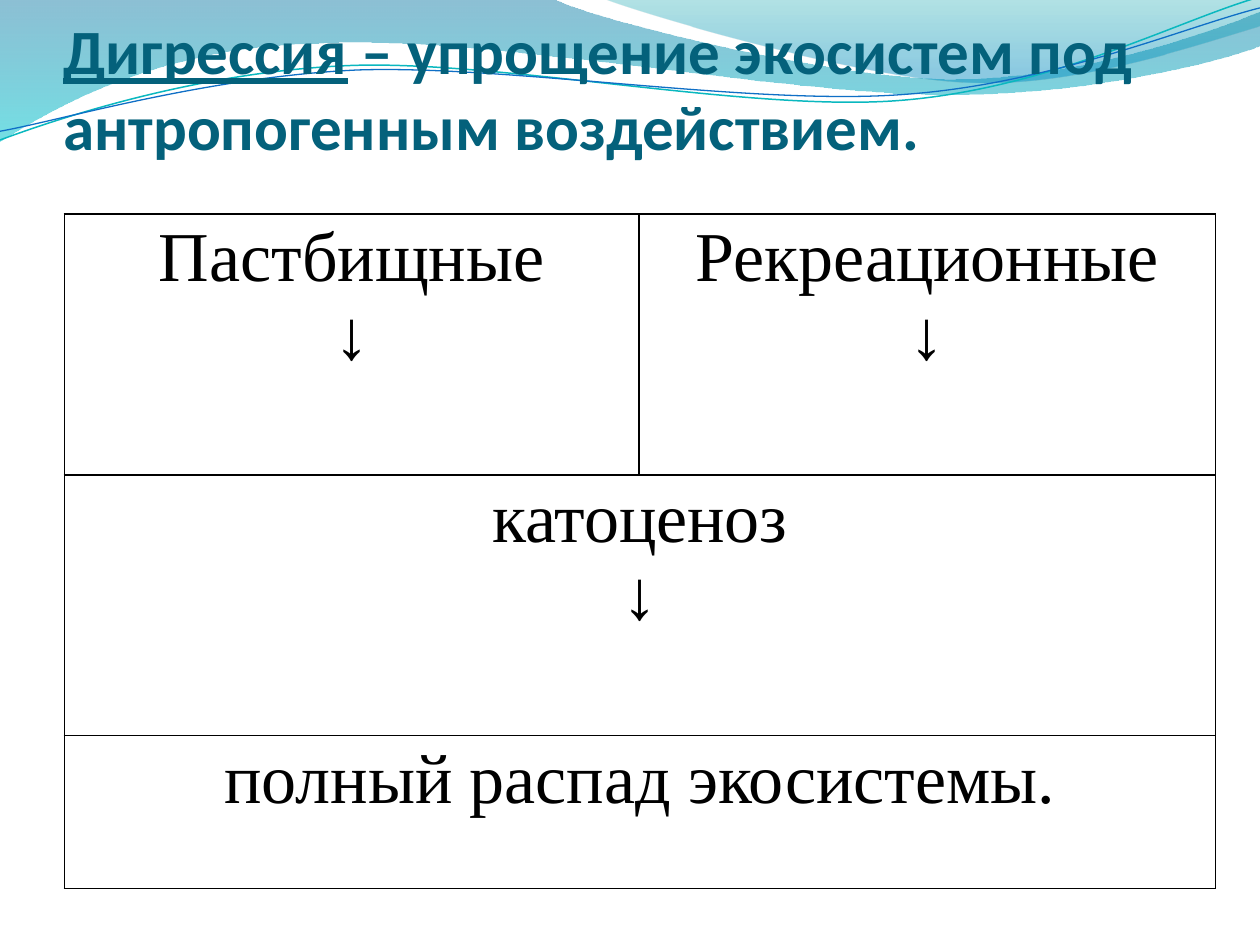
from dataclasses import dataclass

from lxml.etree import SubElement
from pptx import Presentation
from pptx.dml.color import RGBColor
from pptx.enum.text import MSO_ANCHOR, PP_ALIGN
from pptx.oxml.ns import qn
from pptx.util import Pt


@dataclass(frozen=True)
class Theme:
    heading: str = "04617B"
    body: str = "000000"
    border: str = "000000"
    teal_line: str = "0AB8BF"
    blue_line: str = "0F6FC6"
    # Gradient stops: position, colour, opacity in percent
    left_wave: tuple = ((0, "0074A1", 45), (1, "00C6CF", 55))
    right_wave: tuple = ((0, "00A1A9", 30), (0.8, "008BBF", 45))
    heading_font: str = "Calibri"
    body_font: str = "Times New Roman"
    heading_size: int = 36
    body_size: int = 40


def rgb(value):
    return RGBColor.from_string(value)


def bend(shape, steps):
    """Join the three line ends of each six-number step into one cubic curve."""
    ends = iter(list(shape.element.iter(qn("a:lnTo"))))
    for step in steps:
        first = next(ends)
        if len(step) == 2:
            continue
        first.tag = qn("a:cubicBezTo")
        for _ in range(2):
            control = next(ends)
            first.append(control[0])
            control.getparent().remove(control)


class SlideWriter:
    def __init__(self, slide, theme):
        self.slide = slide
        self.theme = theme

    def outline(self, start, steps, closed):
        """Draw line ends (2 numbers) and cubic curves (6 numbers)."""
        builder = self.slide.shapes.build_freeform(Pt(start[0]), Pt(start[1]))
        knots = [(Pt(x), Pt(y)) for step in steps for x, y in zip(step[::2], step[1::2])]
        builder.add_line_segments(knots, close=closed)
        shape = builder.convert_to_shape()
        bend(shape, steps)
        shape.shadow.inherit = False
        return shape

    def wave(self, start, steps, stops):
        """Draw a filled band with a translucent gradient running downwards."""
        shape = self.outline(start, steps, True)
        shape.line.fill.background()
        shape.fill.gradient()
        shape.fill.gradient_angle = 270
        for stop, (position, colour, _) in zip(shape.fill.gradient_stops, stops):
            stop.position = position
            stop.color.rgb = rgb(colour)
        for node, (_, _, opacity) in zip(shape.element.iter(qn("a:srgbClr")), stops):
            SubElement(node, qn("a:alpha"), val=str(opacity * 1000))

    def curve(self, start, steps, colour, width):
        shape = self.outline(start, steps, False)
        shape.fill.background()
        shape.line.color.rgb = rgb(colour)
        shape.line.width = Pt(width)

    def style(self, paragraph, font, size, colour):
        paragraph.font.name = font
        paragraph.font.size = Pt(size)
        paragraph.font.color.rgb = rgb(colour)

    def heading(self, term, definition, left, top, width, height, space_below):
        frame = self.slide.shapes.add_textbox(
            Pt(left), Pt(top), Pt(width), Pt(height)).text_frame
        frame.word_wrap = True
        frame.vertical_anchor = MSO_ANCHOR.BOTTOM
        frame.margin_left = frame.margin_right = frame.margin_top = 0
        frame.margin_bottom = Pt(space_below)
        paragraph = frame.paragraphs[0]
        self.style(paragraph, self.theme.heading_font,
                   self.theme.heading_size, self.theme.heading)
        paragraph.font.bold = True
        term_run = paragraph.add_run()
        term_run.text = term
        term_run.font.underline = True
        paragraph.add_run().text = definition

    def border(self, cell):
        properties = cell._tc.get_or_add_tcPr()
        for position, side in enumerate(("a:lnL", "a:lnR", "a:lnT", "a:lnB")):
            line = properties.makeelement(qn(side), w=str(Pt(1)))
            fill = SubElement(line, qn("a:solidFill"))
            SubElement(fill, qn("a:srgbClr"), val=self.theme.border)
            properties.insert(position, line)

    def stages(self, rows, left, top, widths, heights):
        """Draw the table; a row with a single entry spans all columns."""
        table = self.slide.shapes.add_table(
            len(heights), len(widths), Pt(left), Pt(top),
            Pt(sum(widths)), Pt(sum(heights))).table
        table.first_row = table.horz_banding = False
        for column, width in zip(table.columns, widths):
            column.width = Pt(width)
        for row, height in zip(table.rows, heights):
            row.height = Pt(height)
        for cell in table.iter_cells():
            cell.fill.background()
            self.border(cell)
        for r, entries in enumerate(rows):
            if len(entries) == 1:
                table.cell(r, 0).merge(table.cell(r, len(widths) - 1))
            for c, entry in enumerate(entries):
                self.stage(table.cell(r, c), entry)

    def stage(self, cell, entry):
        cell.margin_left = cell.margin_right = Pt(5)
        cell.margin_top = cell.margin_bottom = Pt(3)
        cell.text = entry
        for paragraph in cell.text_frame.paragraphs:
            paragraph.alignment = PP_ALIGN.CENTER
            self.style(paragraph, self.theme.body_font,
                       self.theme.body_size, self.theme.body)


def main():
    deck = Presentation()
    deck.slide_width, deck.slide_height = Pt(720), Pt(540)
    theme = Theme()
    writer = SlideWriter(deck.slides.add_slide(deck.slide_layouts[6]), theme)

    writer.wave((0, 0), [(317, -0.5),
                         (343, 12, 478, 45, 546, 45), (614, 45, 690, 19, 720, 6.5),
                         (720.5, 26), (708, 32, 626, 55, 537, 54),
                         (448, 54, 275, 20, 185, 24.5), (93, 26, 33, 60, -0.5, 81)],
                theme.left_wave)
    writer.wave((345, -0.5), [(366, 8, 491, 45, 554, 47),
                              (616, 50, 692, 23, 720, 15), (720, 0)],
                theme.right_wave)
    writer.curve((0, 80), [(35, 67, 114, 41, 199, 37.5),
                           (284, 34, 427, 64, 513, 57.5), (600, 51, 675, 11, 719, -1.5)],
                 theme.teal_line, 0.85)
    writer.curve((0, 75), [(34, 69, 118, 44, 204, 40),
                           (290, 37, 430, 60.5, 516, 54), (602, 48, 678, 15, 720, 4.5)],
                 theme.blue_line, 0.75)

    writer.heading("Дигрессия", " – упрощение экосистем под антропогенным воздействием.",
                   left=36.3, top=55.5, width=648, height=90, space_below=52.5)
    writer.stages([["Пастбищные\n↓", "Рекреационные\n↓"],
                   ["катоценоз\n↓"],
                   ["полный распад экосистемы."]],
                  left=36.8, top=122.4, widths=(328.3, 329.5), heights=(149, 149, 87.5))
    deck.save("out.pptx")


if __name__ == "__main__":
    main()
